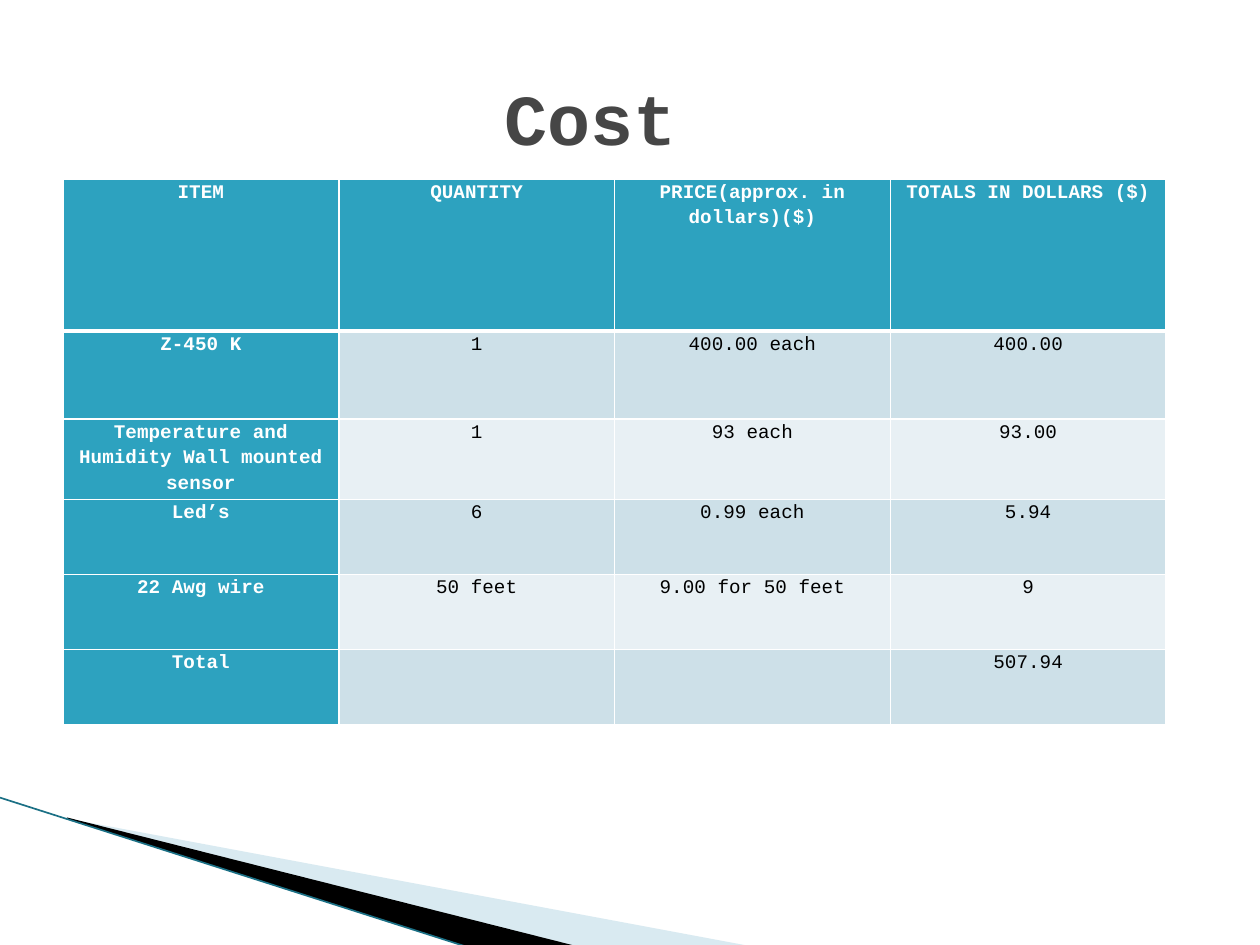
from lxml.etree import SubElement
from pptx import Presentation
from pptx.dml.color import RGBColor
from pptx.enum.shapes import MSO_CONNECTOR
from pptx.enum.text import MSO_ANCHOR, PP_ALIGN
from pptx.oxml import parse_xml
from pptx.oxml.ns import nsdecls, qn
from pptx.util import Cm, Pt

WHITE = RGBColor(0xFF, 0xFF, 0xFF)
BLACK = RGBColor(0x00, 0x00, 0x00)
GREY = RGBColor(0x46, 0x46, 0x46)
TEAL = RGBColor(0x2D, 0xA2, 0xBF)
DARK_TEAL = RGBColor(0x1B, 0x70, 0x85)
SKY = RGBColor(0xA0, 0xCB, 0xDC)
BANDS = (RGBColor(0xE8, 0xF0, 0xF4), RGBColor(0xCD, 0xE0, 0xE8))

FONT = "Courier New"
ROW_HEIGHTS = (3.06, 1.78, 1.62, 1.51, 1.51, 1.51)
COSTS = (
    ("ITEM", "QUANTITY", "PRICE(approx. in dollars)($)", "TOTALS IN DOLLARS ($)"),
    ("Z-450 K", "1", "400.00 each", "400.00"),
    ("Temperature and Humidity Wall mounted sensor", "1", "93 each", "93.00"),
    ("Led’s", "6", "0.99 each", "5.94"),
    ("22 Awg wire", "50 feet", "9.00 for 50 feet", "9"),
    ("Total", "", "", "507.94"),
)


def apply_format(target, values):
    """Set each named attribute of the target."""
    for name, value in values.items():
        setattr(target, name, value)


def write_text(frame, text, size, color, bold, align):
    """Put one formatted paragraph into a text frame and return it."""
    para = frame.paragraphs[0]
    para.alignment = align
    if text:
        para.add_run().text = text
    apply_format(para.font, {"name": FONT, "size": Pt(size), "bold": bold})
    para.font.color.rgb = color
    for span in para.runs:
        apply_format(span.font, {"name": FONT, "size": Pt(size), "bold": bold})
        span.font.color.rgb = color
    return para


def add_wedge(page, left, top, points, color, alpha=100):
    """Draw a filled outline whose points are relative to left and top."""
    corners = [(Cm(left + x), Cm(top + y)) for x, y in points]
    builder = page.shapes.build_freeform(*corners[0], scale=1.0)
    builder.add_line_segments(corners[1:], close=True)
    wedge = builder.convert_to_shape()
    wedge.shadow.inherit = False
    wedge.fill.solid()
    wedge.fill.fore_color.rgb = color
    wedge.line.fill.background()
    if alpha < 100:
        tint = wedge.fill._xPr.find(qn("a:solidFill"))[0]
        SubElement(tint, qn("a:alpha")).set("val", str(alpha * 1000))


def add_corner(page, left, top, width, height):
    """Draw the sweeping wedges and edge line at the foot of the page."""
    pale = ((1.4, 0.43), (15.11, height - 0.03), (11.58, height - 0.03))
    dark = ((1.35, 0.4), (11.61, height - 0.03), (width, height), (1.37, 0.43))
    add_wedge(page, left, top, pale, SKY, 40)
    add_wedge(page, left, top, dark, BLACK)
    edge = page.shapes.add_connector(
        MSO_CONNECTOR.STRAIGHT,
        Cm(left), Cm(top), Cm(left + width), Cm(top + height))
    edge.line.color.rgb = DARK_TEAL
    edge.line.width = Pt(0.95)
    SubElement(edge._element.spPr, qn("a:effectLst"))


def add_title(page, left, top, width, height):
    """Place and format the title placeholder."""
    title = page.shapes.title
    apply_format(title, {"left": Cm(left), "top": Cm(top),
                         "width": Cm(width), "height": Cm(height)})
    apply_format(title.text_frame, {"vertical_anchor": MSO_ANCHOR.MIDDLE,
                                    "margin_left": Cm(8.9), "word_wrap": True})
    write_text(title.text_frame, "Cost", 41, GREY, True, PP_ALIGN.LEFT)


def set_borders(cell, widths):
    """Give a cell white borders, with widths in points keyed by side."""
    properties = cell._tc.get_or_add_tcPr()
    for index, (side, width) in enumerate(widths.items()):
        properties.insert(index, parse_xml(
            f'<a:ln{side} {nsdecls("a")} w="{Pt(width)}"><a:solidFill>'
            f'<a:srgbClr val="{WHITE}"/></a:solidFill></a:ln{side}>'))


def add_cost_table(page, left, top, width):
    """Build the cost table with its heading row and heading column."""
    frame = page.shapes.add_table(
        len(COSTS), len(COSTS[0]), Cm(left), Cm(top), Cm(width), Cm(sum(ROW_HEIGHTS)))
    table = frame.table
    for row, height in zip(table.rows, ROW_HEIGHTS):
        row.height = Cm(height)
    for column in table.columns:
        column.width = Cm(width / len(COSTS[0]))
    for r, texts in enumerate(COSTS):
        for c, text in enumerate(texts):
            heading = r == 0 or c == 0
            cell = table.cell(r, c)
            cell.fill.solid()
            cell.fill.fore_color.rgb = TEAL if heading else BANDS[r % 2]
            apply_format(cell, {"margin_left": Cm(0.18), "margin_right": Cm(0.18),
                                "margin_top": 0, "margin_bottom": 0})
            set_borders(cell, {"L": 1, "R": 1, "T": 3 if r == 1 else 1,
                               "B": 3 if r == 0 else 1})
            para = write_text(cell.text_frame, text, 11,
                              WHITE if heading else BLACK, heading, PP_ALIGN.CENTER)
            para.line_spacing = 1.15


def main():
    """Build the cost slide and save the deck."""
    deck = Presentation()
    deck.slide_width, deck.slide_height = Cm(25.4), Cm(19.05)
    page = deck.slides.add_slide(deck.slide_layouts[5])
    add_corner(page, 0, 16.08, 9.45, 3.02)
    add_title(page, 1.27, 0.76, 22.86, 3.18)
    add_cost_table(page, 1.27, 3.61, 22.24)
    deck.save("out.pptx")


if __name__ == "__main__":
    main()
